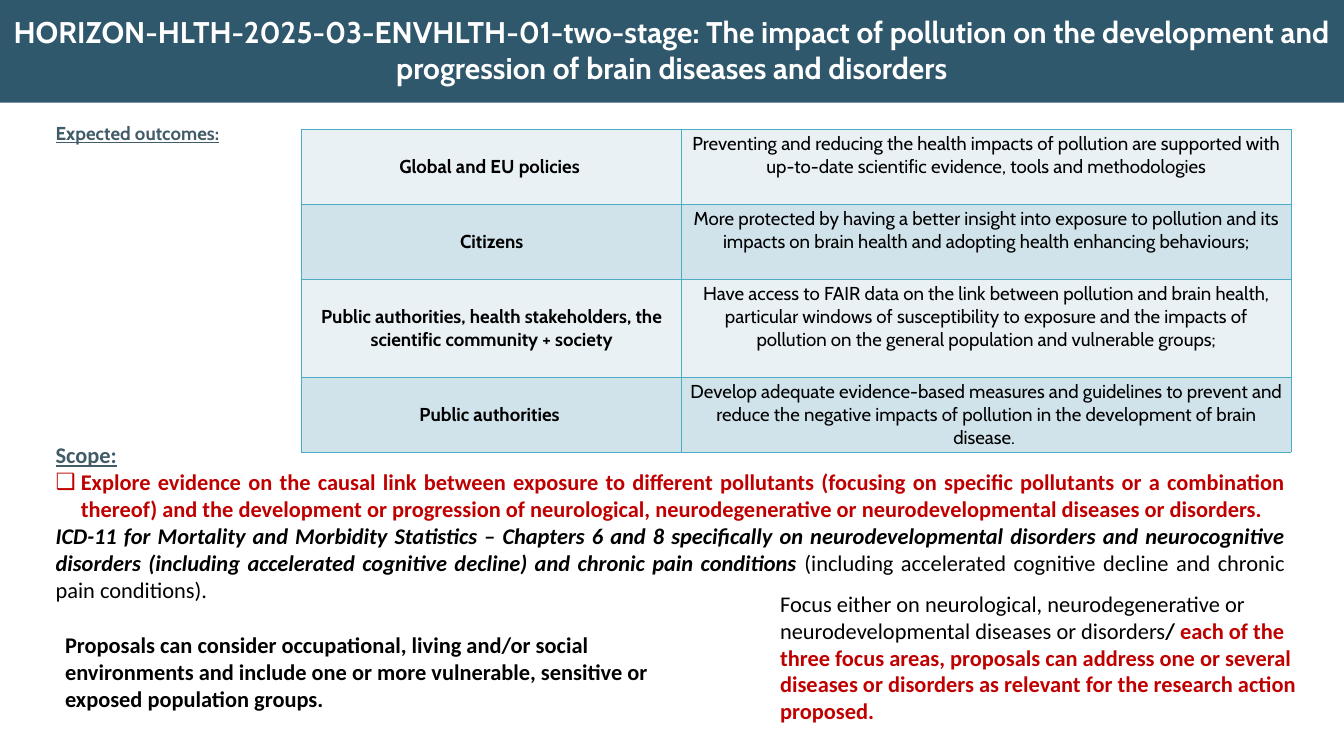
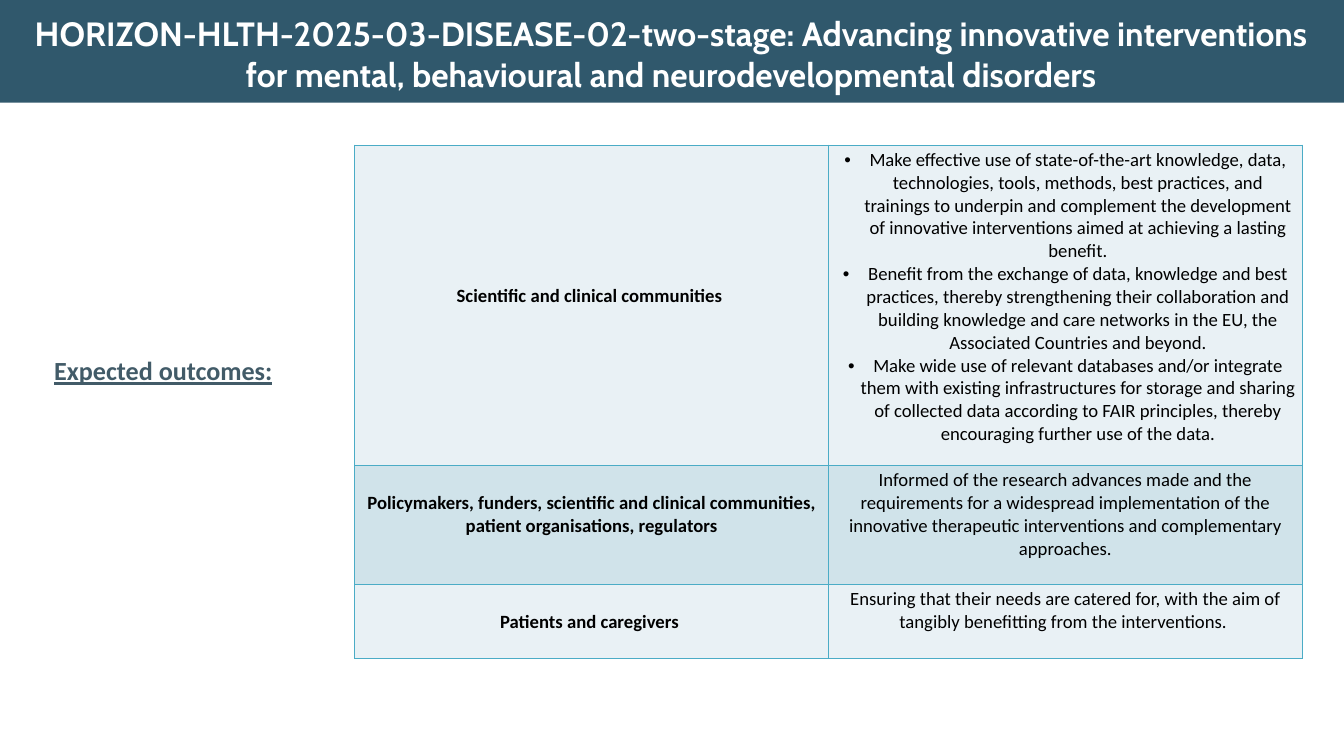
from pptx import Presentation
from pptx.dml.color import RGBColor
from pptx.enum.shapes import MSO_SHAPE
from pptx.enum.text import PP_ALIGN
from pptx.oxml.ns import qn
from pptx.util import Pt
from lxml.etree import SubElement

WIDE, HIGH = 1440, 810
TEAL, SLATE, RED = "30586C", "425B68", "C00000"
BLACK, WHITE, EDGE = "000000", "FFFFFF", "4BACC6"
STRIPES = ("E9F1F5", "D0E3EA")
LINE = 24.4  # height of one table text line


def color(code):
    return RGBColor.from_string(code)


def run(text, tint=BLACK, bold=False, italic=False, under=False, font=None, size=None):
    """Describe a run; font and size fall back to those of its box."""
    return dict(text=text, tint=tint, bold=bold, italic=italic,
                under=under, font=font, size=size)


def para(*runs, align=PP_ALIGN.LEFT, mark=None, gap=0):
    return dict(runs=runs, align=align, mark=mark, gap=gap)


class Deck:
    """Shared style and the current slide."""

    def __init__(self):
        self.prs = Presentation()
        self.prs.slide_width, self.prs.slide_height = Pt(WIDE), Pt(HIGH)
        self.slide = None

    def start(self, title, box, size):
        """Add a slide with the top band and its title."""
        self.slide = self.prs.slides.add_slide(self.prs.slide_layouts[6])
        band = self.slide.shapes.add_shape(
            MSO_SHAPE.RECTANGLE, Pt(0), Pt(0), Pt(WIDE), Pt(110))
        band.shadow.inherit = False
        band.fill.solid()
        band.fill.fore_color.rgb = color(TEAL)
        band.line.fill.background()
        head = para(run(title, WHITE, bold=True), align=PP_ALIGN.CENTER)
        self.text(box, [head], "Cabin", size)

    def fill_in(self, frame, paras, font, size):
        frame.word_wrap = True
        for i, item in enumerate(paras):
            par = frame.add_paragraph() if i else frame.paragraphs[0]
            par.alignment = item["align"]
            if item["gap"]:
                par.space_before = Pt(item["gap"])
            if item["mark"]:
                self.bullet(par, item["mark"])
            for part in item["runs"]:
                bit = par.add_run()
                bit.text = part["text"]
                style = bit.font
                style.name = part["font"] or font
                style.size = Pt(part["size"] or size)
                style.bold, style.italic = part["bold"], part["italic"]
                style.underline = part["under"]
                style.color.rgb = color(part["tint"])

    def bullet(self, par, mark):
        props = par._p.get_or_add_pPr()
        props.set("marL", str(Pt(27)))
        props.set("indent", str(-Pt(27)))
        SubElement(props, qn("a:buFont")).set("typeface", "Arial")
        SubElement(props, qn("a:buChar")).set("char", mark)

    def text(self, box, paras, font, size):
        shape = self.slide.shapes.add_textbox(*map(Pt, box))
        self.fill_in(shape.text_frame, paras, font, size)

    def border(self, cell):
        props = cell._tc.get_or_add_tcPr()
        for side in ("lnL", "lnR", "lnT", "lnB"):
            line = SubElement(props, qn("a:" + side))
            line.set("w", str(Pt(1)))
            fill = SubElement(line, qn("a:solidFill"))
            SubElement(fill, qn("a:srgbClr")).set("val", EDGE)

    def table(self, left, top, cols, rows, font):
        """Each row holds its height, label drop in lines, label, texts and mark."""
        high = sum(row[0] for row in rows)
        grid = self.slide.shapes.add_table(
            len(rows), 2, Pt(left), Pt(top), Pt(sum(cols)), Pt(high)).table
        grid.first_row = grid.horz_banding = False
        for col, width in zip(grid.columns, cols):
            col.width = Pt(width)
        for r, (height, drop, label, texts, mark) in enumerate(rows):
            grid.rows[r].height = Pt(height)
            name = [para(run(label, bold=True), align=PP_ALIGN.CENTER)]
            body = [para(run(t), align=PP_ALIGN.CENTER, mark=mark) for t in texts]
            for c, paras in enumerate((name, body)):
                cell = grid.cell(r, c)
                self.border(cell)
                cell.fill.solid()
                cell.fill.fore_color.rgb = color(STRIPES[r % 2])
                self.fill_in(cell.text_frame, paras, font, 20)
            grid.cell(r, 0).margin_top = Pt(3.6 + drop * LINE)


def impact(deck):
    deck.start("HORIZON-HLTH-2025-03-ENVHLTH-01-two-stage: The impact of pollution on "
               "the development and progression of brain diseases and disorders",
               (0, 10.8, WIDE, 85), 32)

    # Outcomes heading and scope
    full = PP_ALIGN.JUSTIFY
    deck.text((52.5, 127.5, 1331.5, 525.5), [
        para(run("Expected outcomes:", SLATE, bold=True, under=True,
                 font="Cabin", size=20)),
        para(run("Scope:", SLATE, bold=True, under=True), align=full, gap=318),
        para(run("Explore evidence on the causal link between exposure to different "
                 "pollutants (focusing on specific pollutants or a combination thereof) "
                 "and the development or progression of neurological, neurodegenerative "
                 "or neurodevelopmental diseases or disorders. ", RED, bold=True),
             align=full, mark="❑"),
        para(run("ICD-11 for Mortality and Morbidity Statistics – Chapters 6 and 8 "
                 "specifically on neurodevelopmental disorders and neurocognitive "
                 "disorders (including accelerated cognitive decline) and chronic pain "
                 "conditions ", bold=True, italic=True),
             run("(including accelerated cognitive decline and chronic pain "
                 "conditions)."), align=full),
    ], "Calibri", 24)

    # Outcomes by group
    deck.table(323.3, 138.2, (407, 653), [
        (80.6, 1, "Global and EU policies ", [
            "Preventing and reducing the health impacts of pollution are supported with "
            "up-to-date scientific evidence, tools and methodologies"], None),
        (80.6, 1, "Citizens", [
            "More protected by having a better insight into exposure to pollution and "
            "its impacts on brain health and adopting health enhancing behaviours;"], None),
        (105, 1, "Public authorities, health stakeholders, the scientific community "
                 "+ society", [
            "Have access to FAIR data on the link between pollution and brain health, "
            "particular windows of susceptibility to exposure and the impacts of "
            "pollution on the general population and vulnerable groups;"], None),
        (80, 1, "Public authorities ", [
            "Develop adequate evidence-based measures and guidelines to prevent and "
            "reduce the negative impacts of pollution in the development of brain "
            "disease. "], None),
    ], "Cabin")

    # Notes on proposals
    deck.text((62.6, 672.5, 713, 119), [
        para(run("Proposals can consider occupational, living and/or social environments "
                 "and include one or more vulnerable, sensitive or exposed population "
                 "groups.", bold=True))], "Calibri", 24)
    deck.text((828.7, 628.5, 588, 153), [
        para(run("Focus either on neurological, neurodegenerative or neurodevelopmental "
                 "diseases or disorders"),
             run("/ ", bold=True),
             run("each of the three focus areas, proposals can address one or several "
                 "diseases or disorders as relevant for the research action proposed.",
                 RED, bold=True))], "Calibri", 24)


def disease(deck):
    deck.start("HORIZON-HLTH-2025-03-DISEASE-02-two-stage: Advancing innovative "
               "interventions for mental, behavioural and neurodevelopmental disorders",
               (9.4, 10.8, 1419, 94), 36)

    # Outcomes heading
    deck.text((51, 376.5, 1134, 135), [
        para(run("Expected outcomes:", SLATE, bold=True, under=True))], "Calibri", 28)

    # Outcomes by group
    deck.table(380, 155.5, (507.6, 507.6), [
        (343, 6, "Scientific and clinical communities ", [
            "Make effective use of state-of-the-art knowledge, data, technologies, tools, "
            "methods, best practices, and trainings to underpin and complement the "
            "development of innovative interventions aimed at achieving a lasting benefit.",
            "Benefit from the exchange of data, knowledge and best practices, thereby "
            "strengthening their collaboration and building knowledge and care networks "
            "in the EU, the Associated Countries and beyond.",
            "Make wide use of relevant databases and/or integrate them with existing "
            "infrastructures for storage and sharing of collected data according to FAIR "
            "principles, thereby encouraging further use of the data."], "•"),
        (127.5, 1, "Policymakers, funders, scientific and clinical communities, patient "
                   "organisations, regulators", [
            "Informed of the research advances made and the requirements for a widespread "
            "implementation of the innovative therapeutic interventions and complementary "
            "approaches."], None),
        (79.5, 1, "Patients and caregivers ", [
            "Ensuring that their needs are catered for, with the aim of tangibly "
            "benefitting from the interventions. "], None),
    ], "Calibri")


def main():
    deck = Deck()
    impact(deck)
    disease(deck)
    deck.prs.save("out.pptx")


if __name__ == "__main__":
    main()
